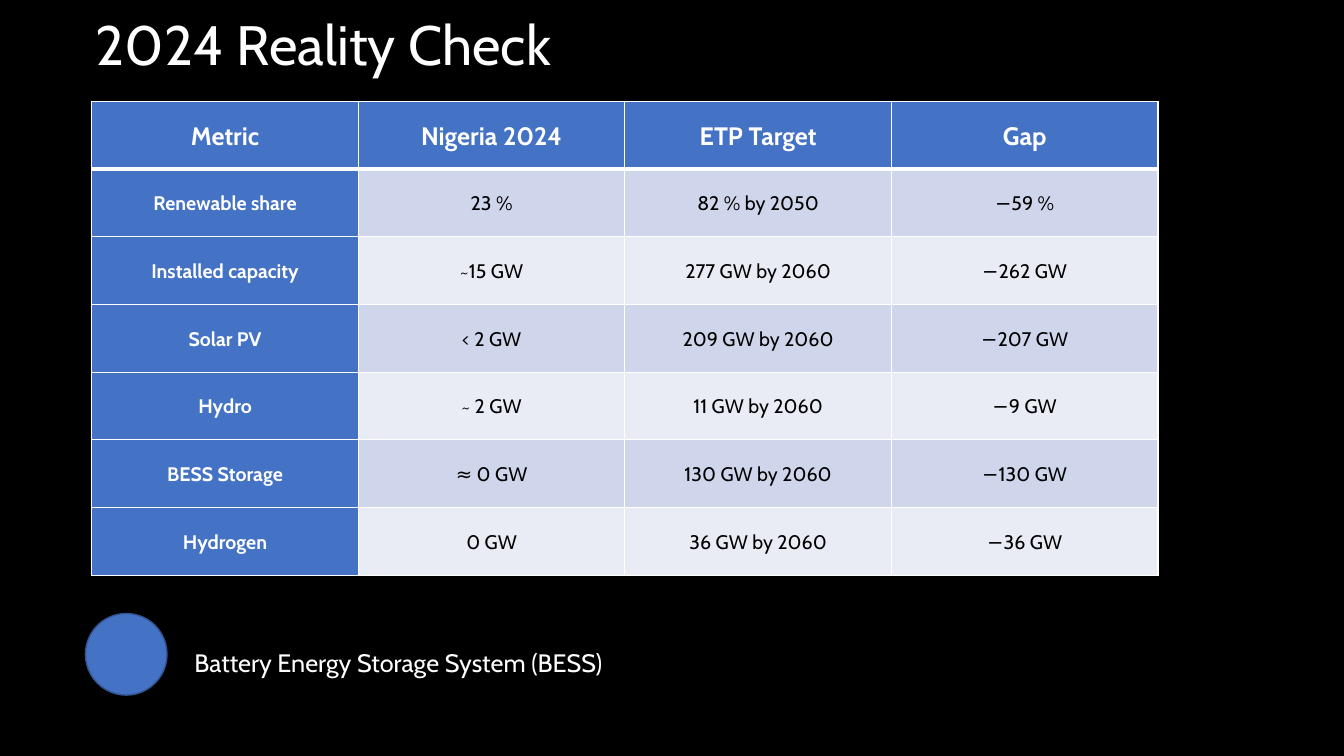
from lxml import etree
from pptx import Presentation
from pptx.dml.color import RGBColor
from pptx.enum import shapes, text
from pptx.oxml import ns
from pptx.util import Pt

BLACK = RGBColor(0x00, 0x00, 0x00)
WHITE = RGBColor(0xFF, 0xFF, 0xFF)
BLUE = RGBColor(0x44, 0x72, 0xC4)
DARK_BLUE = RGBColor(0x32, 0x54, 0x91)
BAND_DARK = RGBColor(0xCF, 0xD5, 0xEA)
BAND_LIGHT = RGBColor(0xE9, 0xEB, 0xF5)

ROWS = [
    ("Metric", "Nigeria 2024", "ETP Target", "Gap"),
    ("Renewable share", "23 %", "82 % by 2050", "−59 %"),
    ("Installed capacity", "~15 GW", "277 GW by 2060", "−262 GW"),
    ("Solar PV", "< 2 GW", "209 GW by 2060", "−207 GW"),
    ("Hydro", "~ 2 GW", "11 GW by 2060", "−9 GW"),
    ("BESS Storage", "≈ 0 GW", "130 GW by 2060", "−130 GW"),
    ("Hydrogen", "0 GW", "36 GW by 2060", "−36 GW"),
]
COLUMN_WIDTH = 190.4
ROW_HEIGHT = 48.36


def write(frame, words, size, color=WHITE, bold=False,
          align=text.PP_ALIGN.LEFT, spacing=1.0):
    para = frame.paragraphs[0]
    para.alignment = align
    para.line_spacing = spacing
    span = para.add_run()
    span.text = words
    span.font.name = "Cabin"
    span.font.size = Pt(size)
    span.font.bold = bold
    span.font.color.rgb = color


def draw_borders(cell, **widths):
    """Give the cell white borders; the keys are L, R, T and B, in that order."""
    properties = cell._tc.get_or_add_tcPr()
    for place, (side, width) in enumerate(widths.items()):
        line = etree.Element(ns.qn(f"a:ln{side}"), w=str(Pt(width)))
        fill = etree.SubElement(line, ns.qn("a:solidFill"))
        etree.SubElement(fill, ns.qn("a:srgbClr"), val=str(WHITE))
        properties.insert(place, line)


deck = Presentation()
deck.slide_width, deck.slide_height = Pt(960), Pt(540)
page = deck.slides.add_slide(deck.slide_layouts[5])
page.background.fill.solid()
page.background.fill.fore_color.rgb = BLACK

title = page.shapes.title
title.left, title.top, title.width, title.height = Pt(61.2), Pt(16.5), Pt(828), Pt(35.3)
title.text_frame.auto_size = text.MSO_AUTO_SIZE.NONE
title.text_frame.vertical_anchor = text.MSO_ANCHOR.MIDDLE
write(title.text_frame, "2024 Reality Check", 39.6, spacing=0.9)

table = page.shapes.add_table(
    len(ROWS), len(ROWS[0]), Pt(65.6), Pt(72.4),
    Pt(COLUMN_WIDTH * len(ROWS[0])), Pt(ROW_HEIGHT * len(ROWS))).table
table.first_col = True
for column in table.columns:
    column.width = Pt(COLUMN_WIDTH)
for r, values in enumerate(ROWS):
    table.rows[r].height = Pt(ROW_HEIGHT)
    for c, value in enumerate(values):
        cell = table.cell(r, c)
        heading = r == 0 or c == 0
        cell.margin_left = cell.margin_right = Pt(0.72)
        cell.margin_top = cell.margin_bottom = Pt(0.72)
        cell.vertical_anchor = text.MSO_ANCHOR.MIDDLE
        cell.fill.solid()
        cell.fill.fore_color.rgb = BLUE if heading else BAND_DARK if r % 2 else BAND_LIGHT
        draw_borders(cell, L=1, R=1, T=3 if r == 1 else 1, B=3 if r == 0 else 1)
        write(cell.text_frame, value, 18 if r == 0 else 14,
              color=WHITE if heading else BLACK, bold=heading,
              align=text.PP_ALIGN.CENTER, spacing=1.07)

note = page.shapes.add_textbox(Pt(131.8), Pt(458.6), Pt(314.6), Pt(29))
note.text_frame.word_wrap = False
note.text_frame.auto_size = text.MSO_AUTO_SIZE.SHAPE_TO_FIT_TEXT
write(note.text_frame, "Battery Energy Storage System (BESS)", 18)

circle = page.shapes.add_shape(
    shapes.MSO_SHAPE.FLOWCHART_CONNECTOR, Pt(61), Pt(438.2), Pt(58.3), Pt(58.3))
circle.shadow.inherit = False
circle.fill.solid()
circle.fill.fore_color.rgb = BLUE
circle.line.color.rgb = DARK_BLUE
circle.line.width = Pt(1)

deck.save("out.pptx")
